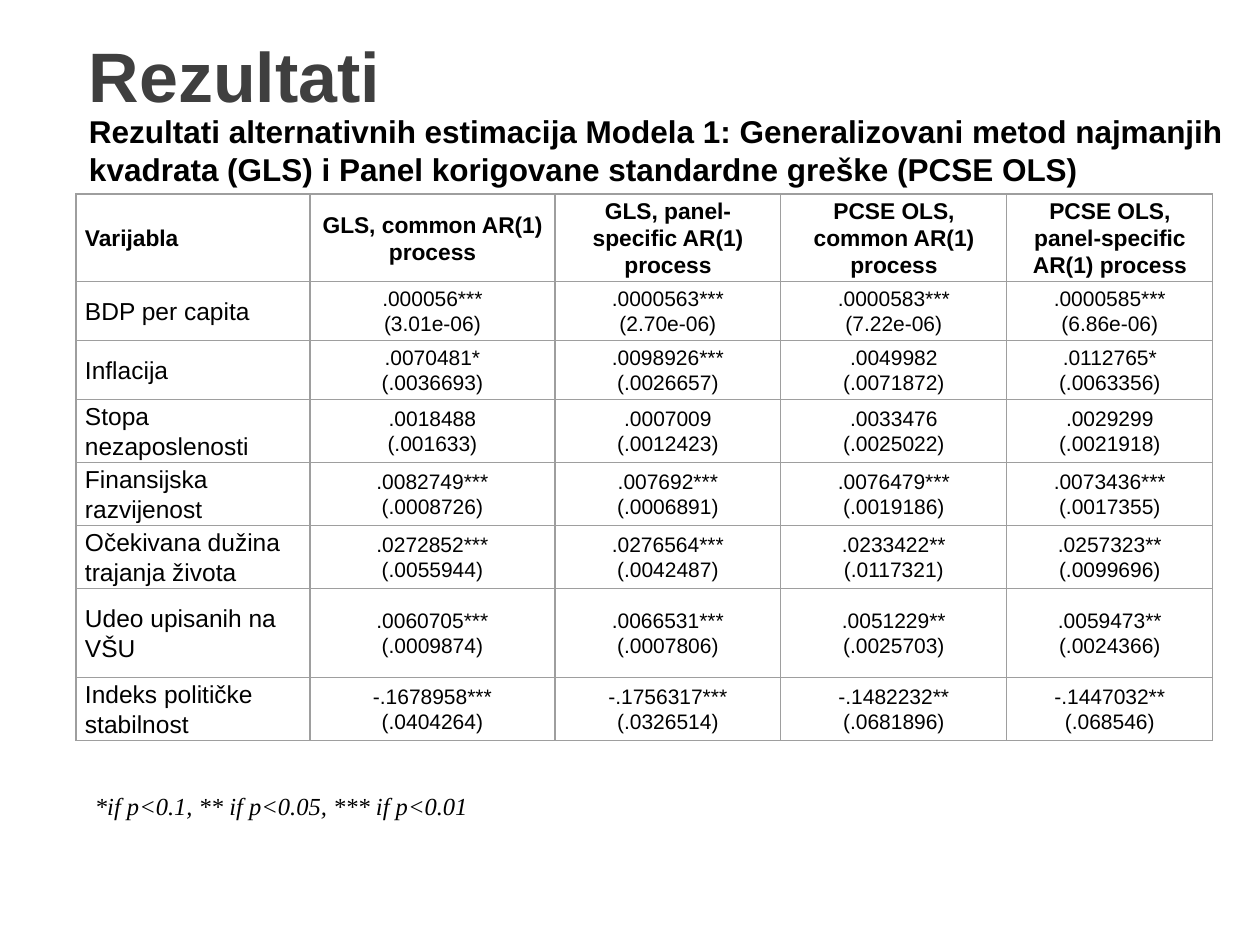
from lxml import etree
from pptx import Presentation, util as u
from pptx.dml.color import RGBColor
from pptx.enum import text
from pptx.oxml.ns import qn

TITLE = "Rezultati"
SUBTITLE = ("Rezultati alternativnih estimacija Modela 1: Generalizovani metod najmanjih "
            "kvadrata (GLS) i Panel korigovane standardne greške (PCSE OLS)")
FOOTNOTE = "*if p<0.1, ** if p<0.05, *** if p<0.01"

HEADERS = ["Varijabla", "GLS, common AR(1) process", "GLS, panel-specific AR(1) process",
           "PCSE OLS, common AR(1) process", "PCSE OLS, panel-specific AR(1) process"]
# Each estimate is followed by its standard error in the next line
ESTIMATES = [
    ["BDP per capita", ".000056***\n(3.01e-06)", ".0000563***\n(2.70e-06)",
     ".0000583***\n(7.22e-06)", ".0000585***\n(6.86e-06)"],
    ["Inflacija", ".0070481*\n(.0036693)", ".0098926***\n(.0026657)",
     ".0049982\n(.0071872)", ".0112765*\n(.0063356)"],
    ["Stopa nezaposlenosti", ".0018488\n(.001633)", ".0007009\n(.0012423)",
     ".0033476\n(.0025022)", ".0029299\n(.0021918)"],
    ["Finansijska razvijenost", ".0082749***\n(.0008726)", ".007692***\n(.0006891)",
     ".0076479***\n(.0019186)", ".0073436***\n(.0017355)"],
    ["Očekivana dužina trajanja života", ".0272852***\n(.0055944)", ".0276564***\n(.0042487)",
     ".0233422**\n(.0117321)", ".0257323**\n(.0099696)"],
    ["Udeo upisanih na VŠU", ".0060705***\n(.0009874)", ".0066531***\n(.0007806)",
     ".0051229**\n(.0025703)", ".0059473**\n(.0024366)"],
    ["Indeks političke stabilnost", "-.1678958***\n(.0404264)", "-.1756317***\n(.0326514)",
     "-.1482232**\n(.0681896)", "-.1447032**\n(.068546)"],
]
COLUMN_WIDTHS = [234, 245, 226, 226, 206]
ROW_HEIGHTS = [63, 59, 59, 59, 59, 59, 89, 59]

BLACK = RGBColor(0x00, 0x00, 0x00)
WHITE = RGBColor(0xFF, 0xFF, 0xFF)
DARK_GRAY = RGBColor(0x3F, 0x3F, 0x3F)
BORDER_GRAY = RGBColor(0x9E, 0x9E, 0x9E)
LEFT = 76


def px(length):
    return u.Emu(round(length * 914400 / 126))


def set_font(para, size, name="Arial", color=BLACK, bold=False, italic=False):
    font = para.font
    font.name, font.size, font.bold, font.italic = name, u.Pt(size), bold, italic
    font.color.rgb = color


def add_text(page, words, place, inset=(13, 6), wrap=True, **style):
    """Add a text box; inset is its left and top margin in px."""
    box = page.shapes.add_textbox(*map(px, place))
    frame = box.text_frame
    frame.word_wrap = wrap
    frame.margin_left, frame.margin_top = map(px, inset)
    frame.text = words
    para = frame.paragraphs[0]
    para.alignment = text.PP_ALIGN.LEFT
    set_font(para, **style)


def add_borders(cell):
    properties = cell._tc.get_or_add_tcPr()
    for index, side in enumerate(("a:lnL", "a:lnR", "a:lnT", "a:lnB")):
        line = etree.Element(qn(side), w=str(u.Pt(0.75)))
        fill = etree.SubElement(line, qn("a:solidFill"))
        etree.SubElement(fill, qn("a:srgbClr"), val=str(BORDER_GRAY))
        properties.insert(index, line)


def fill_cell(cell, words, size, bold, centered):
    cell.fill.solid()
    cell.fill.fore_color.rgb = WHITE
    add_borders(cell)
    cell.vertical_anchor = text.MSO_ANCHOR.MIDDLE
    cell.margin_left = cell.margin_right = px(9)
    cell.margin_top = cell.margin_bottom = 0
    cell.text_frame.text = words
    for para in cell.text_frame.paragraphs:
        para.alignment = text.PP_ALIGN.CENTER if centered else text.PP_ALIGN.LEFT
        para.line_spacing = 1.07
        set_font(para, size, bold=bold)


def add_results(page):
    rows = [HEADERS] + ESTIMATES
    table = page.shapes.add_table(len(rows), len(HEADERS), px(LEFT), px(194),
                                  px(sum(COLUMN_WIDTHS)), px(sum(ROW_HEIGHTS))).table
    table.first_row = table.horz_banding = False
    for column, width in zip(table.columns, COLUMN_WIDTHS):
        column.width = px(width)
    for r, (row, height) in enumerate(zip(rows, ROW_HEIGHTS)):
        table.rows[r].height = px(height)
        for c, words in enumerate(row):
            size = 13 if r == 0 else 14 if c == 0 else 12
            fill_cell(table.cell(r, c), words, size, bold=r == 0, centered=c > 0)


def main():
    deck = Presentation()
    deck.slide_width, deck.slide_height = px(1260), px(945)
    page = deck.slides.add_slide(deck.slide_layouts[6])
    add_text(page, TITLE, (LEFT, 18, 1068, 145), inset=(13, 15),
             size=40, color=DARK_GRAY, bold=True)
    add_text(page, SUBTITLE, (LEFT, 106, 1176, 127), size=18, bold=True)
    add_results(page)
    add_text(page, FOOTNOTE, (LEFT, 785, 407, 43), inset=(19, 6), wrap=False,
             size=14, name="Times New Roman", italic=True)
    deck.save("out.pptx")


if __name__ == "__main__":
    main()
